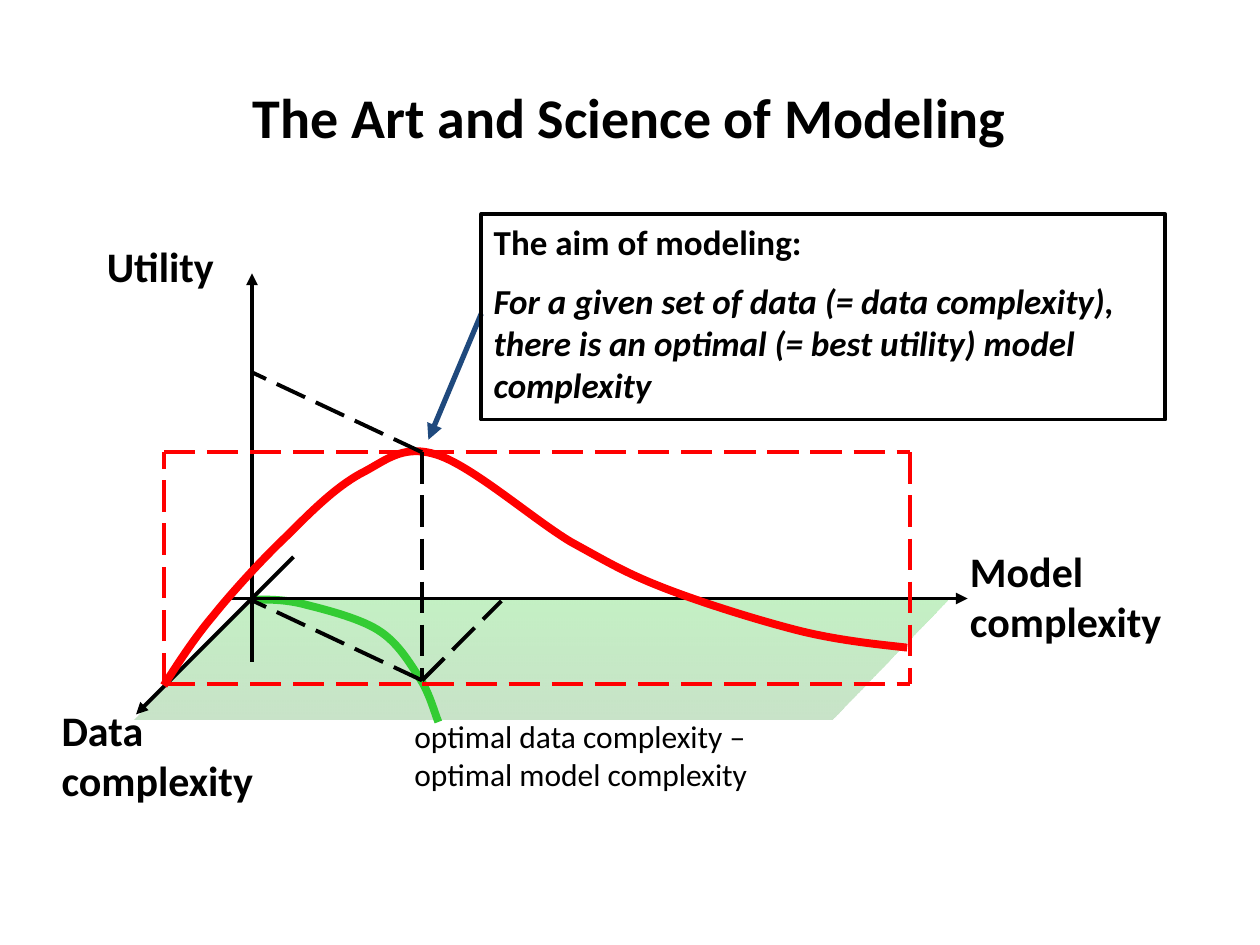
from lxml import etree
from pptx import Presentation
from pptx import util as u
from pptx.dml.color import RGBColor
from pptx.enum import dml, shapes, text
from pptx.oxml import ns

BLACK, RED, GREEN, BLUE = "000000", "FF0000", "33CC33", "1F497D"


def color(value):
    return RGBColor.from_string(value)


def add_xml(parent, tag, **attributes):
    return etree.SubElement(parent, ns.qn(tag), attributes)


def write(shape, paragraphs, anchor=text.MSO_ANCHOR.TOP, align=text.PP_ALIGN.LEFT):
    """Fill a shape with (words, font formats) paragraphs."""
    frame = shape.text_frame
    frame.word_wrap = True
    frame.vertical_anchor = anchor
    for index, (words, formats) in enumerate(paragraphs):
        para = frame.add_paragraph() if index else frame.paragraphs[0]
        para.text = words
        para.alignment = align
        if index:
            para.space_before = u.Pt(10)
        for span in para.runs:
            span.font.color.rgb = color(BLACK)
            for name, value in {"name": "Calibri", **formats}.items():
                setattr(span.font, name, value)


def add_label(page, box, words, size, bold=True, **layout):
    label = page.shapes.add_textbox(*map(u.Inches, box))
    write(label, [(words, {"size": u.Pt(size), "bold": bold})], **layout)


def add_line(page, start, end, line_color=BLACK, width=2.25, dashed=False, arrow=False):
    line = page.shapes.add_connector(
        shapes.MSO_CONNECTOR.STRAIGHT, *map(u.Inches, (*start, *end)))
    line.line.color.rgb = color(line_color)
    line.line.width = u.Pt(width)
    if dashed:
        line.line.dash_style = dml.MSO_LINE.LONG_DASH
    if arrow:
        add_xml(line.line._get_or_add_ln(), "a:tailEnd", type="triangle")
    add_xml(line._element.spPr, "a:effectLst")


def add_curve(page, start, points, line_color):
    """Draw joined cubic curves: two handles and an end point for each."""
    builder = page.shapes.build_freeform(*map(u.Inches, start))
    builder.add_line_segments([tuple(map(u.Inches, p)) for p in points], close=False)
    curve = builder.convert_to_shape()
    # Gather every three straight steps into one cubic step
    steps = list(curve._element.iter(ns.qn("a:lnTo")))
    for first in range(0, len(steps), 3):
        cubic = add_xml(steps[0].getparent(), "a:cubicBezTo")
        for step in steps[first:first + 3]:
            cubic.append(step[0])
    for step in steps:
        step.getparent().remove(step)
    curve.shadow.inherit = False
    curve.fill.background()
    curve.line.color.rgb = color(line_color)
    curve.line.width = u.Pt(4.5)


def add_plane(page, box):
    plane = page.shapes.add_shape(shapes.MSO_SHAPE.PARALLELOGRAM, *map(u.Inches, box))
    plane.adjustments[0] = 0.98
    plane.shadow.inherit = False
    plane.line.fill.background()
    plane.fill.gradient()
    plane.fill.gradient_angle = 270
    stops = plane.fill.gradient_stops
    for stop, value in zip(stops, (GREEN, "249224")):
        stop.color.rgb = color(value)
    tints = plane._element.spPr.iter(ns.qn("a:srgbClr"))
    for tint, opacity in zip(tints, (29, 25)):
        add_xml(tint, "a:alpha", val=str(opacity * 1000))


def add_aim(page, box):
    aim = page.shapes.add_shape(shapes.MSO_SHAPE.RECTANGLE, *map(u.Inches, box))
    aim.shadow.inherit = False
    aim.fill.background()
    aim.line.color.rgb = color(BLACK)
    aim.line.width = u.Pt(2.25)
    bold = {"size": u.Pt(20), "bold": True}
    write(aim, [
        ("The aim of modeling:", bold),
        ("For a given set of data (= data complexity), there is an optimal "
         "(= best utility) model complexity", {**bold, "italic": True}),
    ])


def main():
    deck = Presentation()
    deck.slide_width, deck.slide_height = u.Inches(10), u.Inches(7.5)
    page = deck.slides.add_slide(deck.slide_layouts[6])

    # Ground plane and the line of optimal pairs
    add_plane(page, (1.06, 4.77, 6.46, 0.94))
    add_curve(page, (2.01, 4.76), [
        (2.07, 4.76), (2.22, 4.75), (2.39, 4.79),
        (2.55, 4.83), (2.84, 4.9), (3, 5),
        (3.16, 5.1), (3.25, 5.26), (3.33, 5.38),
        (3.41, 5.5), (3.45, 5.66), (3.48, 5.73),
    ], GREEN)

    add_label(page, (0.5, 0.3, 9, 1.25), "The Art and Science of Modeling", 32,
              anchor=text.MSO_ANCHOR.MIDDLE, align=text.PP_ALIGN.CENTER)

    # Axes with their names
    for start, end in (((2, 5.25), (2, 2.17)),
                       ((1.83, 4.75), (7.68, 4.75)),
                       ((2.33, 4.42), (1.08, 5.67))):
        add_line(page, start, end, arrow=True)
    add_label(page, (7.6, 4.28, 1.94, 0.9), "Model\vcomplexity", 24)
    add_label(page, (0.75, 1.86, 1.13, 0.5), "Utility", 24)
    add_label(page, (0.39, 5.54, 1.94, 0.9), "Data\vcomplexity", 24)

    # Utility curve within its section frame
    add_curve(page, (1.3, 5.44), [
        (1.36, 5.35), (1.52, 5.09), (1.69, 4.89),
        (1.85, 4.69), (2.09, 4.43), (2.28, 4.25),
        (2.47, 4.06), (2.66, 3.87), (2.86, 3.76),
        (3.06, 3.66), (3.19, 3.52), (3.47, 3.61),
        (3.75, 3.7), (4.23, 4.12), (4.53, 4.3),
        (4.84, 4.47), (4.97, 4.55), (5.28, 4.67),
        (5.59, 4.79), (6.04, 4.93), (6.36, 5.01),
        (6.69, 5.09), (7.03, 5.12), (7.2, 5.14),
    ], RED)
    left, top, right, bottom = 1.3, 3.59, 7.22, 5.43
    for start, end in (((left, bottom), (right, bottom)),
                       ((left, bottom), (left, top)),
                       ((left, top), (right, top)),
                       ((right, top), (right, bottom))):
        add_line(page, start, end, RED, dashed=True)

    # Aim of modeling, pointing at the peak
    add_line(page, (3.82, 2.49), (3.4, 3.49), BLUE, width=3, arrow=True)
    add_aim(page, (3.82, 1.7, 5.43, 1.63))

    # Projections of the peak
    peak, foot = (3.35, top), (3.35, 5.4)
    for start, end in ((peak, foot), (foot, (3.98, 4.77)),
                       (foot, (2.01, 4.77)), (peak, (2.01, 2.96))):
        add_line(page, start, end, dashed=True)
    add_label(page, (3.19, 5.64, 3.09, 0.7),
              "optimal data complexity –\voptimal model complexity", 18, bold=False)

    deck.save("out.pptx")


if __name__ == "__main__":
    main()
